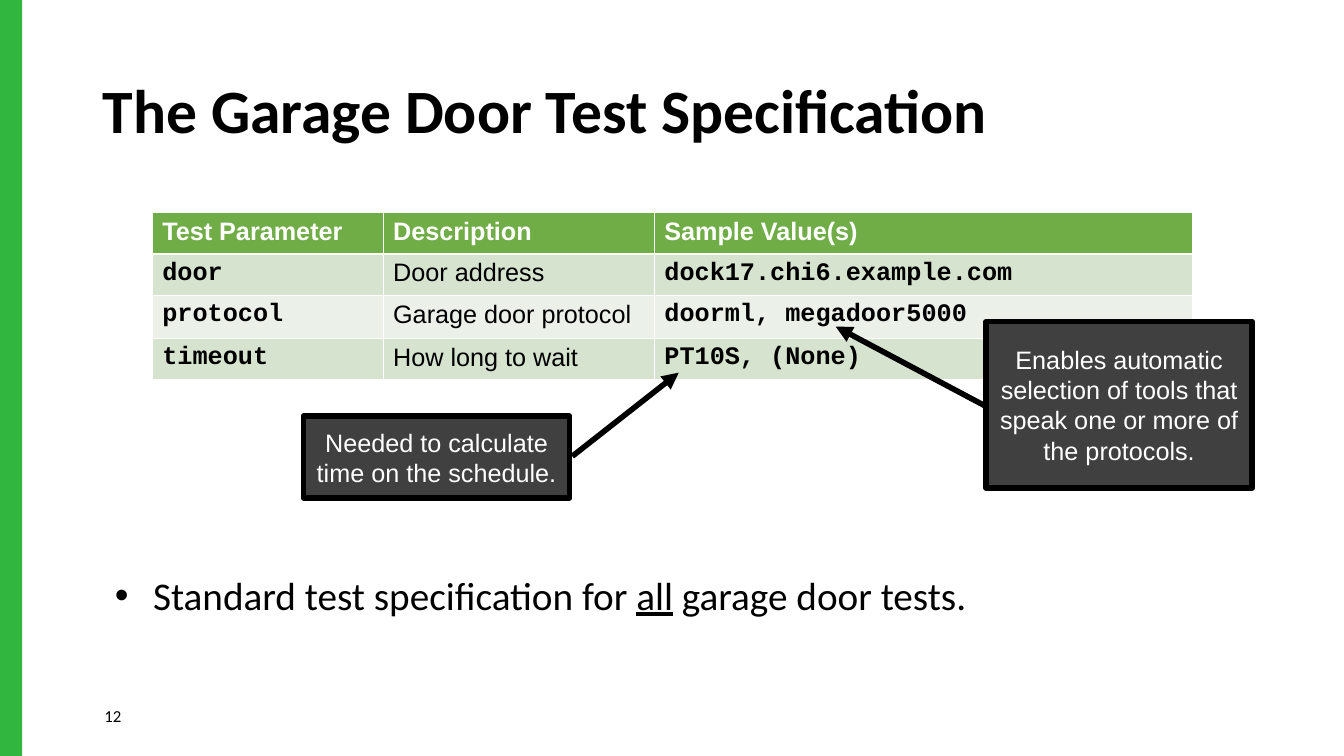
from lxml.etree import SubElement
from pptx import Presentation
from pptx.dml.color import RGBColor
from pptx.enum.shapes import MSO_SHAPE
from pptx.enum.text import MSO_ANCHOR, PP_ALIGN
from pptx.oxml.ns import qn
from pptx.util import Inches, Pt

BLACK = RGBColor(0x00, 0x00, 0x00)
WHITE = RGBColor(0xFF, 0xFF, 0xFF)
SIDEBAR_GREEN = RGBColor(0x31, 0xB6, 0x3F)
HEADER_GREEN = RGBColor(0x70, 0xAD, 0x47)
BAND_DARK = RGBColor(0xD5, 0xE3, 0xCF)
BAND_LIGHT = RGBColor(0xEB, 0xF1, 0xE9)
CALLOUT_GRAY = RGBColor(0x40, 0x40, 0x40)


def set_font(paragraph, name, size, color, bold=False):
    font = paragraph.font
    font.name = name
    font.size = Pt(size)
    font.bold = bold
    font.color.rgb = color


def add_text_box(slide, left, top, width, height, anchor):
    text_frame = slide.shapes.add_textbox(
        Inches(left), Inches(top), Inches(width), Inches(height)).text_frame
    text_frame.word_wrap = True
    text_frame.vertical_anchor = anchor
    return text_frame.paragraphs[0]


presentation = Presentation()
presentation.slide_width = Inches(13.33)
presentation.slide_height = Inches(7.5)
slide = presentation.slides.add_slide(presentation.slide_layouts[6])

sidebar = slide.shapes.add_shape(
    MSO_SHAPE.RECTANGLE, 0, 0, Inches(0.22), Inches(7.5))
sidebar.shadow.inherit = False
sidebar.fill.solid()
sidebar.fill.fore_color.rgb = SIDEBAR_GREEN
sidebar.line.fill.background()

title = add_text_box(slide, 0.92, 0.4, 11.5, 1.45, MSO_ANCHOR.MIDDLE)
title.text = "The Garage Door Test Specification"
title.line_spacing = 0.9
set_font(title, "Calibri", 44, BLACK, True)

slide_number = add_text_box(slide, 0.92, 6.9, 0.4, 0.4, MSO_ANCHOR.MIDDLE)
slide_number.text = "12"
slide_number.alignment = PP_ALIGN.CENTER
set_font(slide_number, "Calibri", 12, BLACK)

parameters = [
    ("Test Parameter", "Description", "Sample Value(s)"),
    ("door", "Door address", "dock17.chi6.example.com"),
    ("protocol", "Garage door protocol", "doorml, megadoor5000"),
    ("timeout", "How long to wait", "PT10S, (None)"),
]
row_fills = [HEADER_GREEN, BAND_DARK, BAND_LIGHT, BAND_DARK]
table = slide.shapes.add_table(
    4, 3, Inches(1.51), Inches(2.11), Inches(10.32), Inches(1.66)).table
for column, width in zip(table.columns, [2.29, 2.69, 5.34]):
    column.width = Inches(width)
for row, height in zip(table.rows, [0.41, 0.41, 0.43, 0.41]):
    row.height = Inches(height)
for row_index, values in enumerate(parameters):
    for column_index, value in enumerate(values):
        cell = table.cell(row_index, column_index)
        cell.text = value
        cell.fill.solid()
        cell.fill.fore_color.rgb = row_fills[row_index]
        is_header = row_index == 0
        is_code = not is_header and column_index != 1
        set_font(cell.text_frame.paragraphs[0],
                 "Courier New" if is_code else "Arial", 18,
                 WHITE if is_header else BLACK, is_header or is_code)

callouts = [
    ("Enables automatic selection of tools that speak one or more of the protocols.",
     9.78, 3.19, 1.65, [0.51, 0, 0.03, -0.565]),
    ("Needed to calculate time on the schedule.",
     3.01, 4.13, 0.81, [0.49, 1.01, -0.535, 1.41]),
]
for text, left, top, height, pointer in callouts:
    callout = slide.shapes.add_shape(
        MSO_SHAPE.LINE_CALLOUT_1,
        Inches(left), Inches(top), Inches(2.64), Inches(height))
    for index, value in enumerate(pointer):
        callout.adjustments[index] = value
    callout.shadow.inherit = False
    callout.fill.solid()
    callout.fill.fore_color.rgb = CALLOUT_GRAY
    callout.line.color.rgb = BLACK
    callout.line.width = Pt(4)
    outline = callout.line._get_or_add_ln()
    SubElement(outline, qn("a:round"))
    SubElement(outline, qn("a:tailEnd"), type="triangle")
    callout.text_frame.word_wrap = True
    callout.text_frame.vertical_anchor = MSO_ANCHOR.MIDDLE
    paragraph = callout.text_frame.paragraphs[0]
    paragraph.text = text
    paragraph.alignment = PP_ALIGN.CENTER
    set_font(paragraph, "Arial", 18, WHITE)

body = add_text_box(slide, 0.92, 5.67, 11.5, 1.14, MSO_ANCHOR.TOP)
body.line_spacing = 0.9
properties = body._p.get_or_add_pPr()
properties.set("marL", str(Inches(0.5)))
properties.set("indent", str(Inches(-0.38)))
SubElement(properties, qn("a:buFont"), typeface="Arial")
SubElement(properties, qn("a:buChar"), char="•")
for text in ["Standard test specification for ", "all", " garage door tests."]:
    run = body.add_run()
    run.text = text
    run.font.underline = text == "all"
set_font(body, "Calibri", 28, BLACK)

presentation.save("out.pptx")
